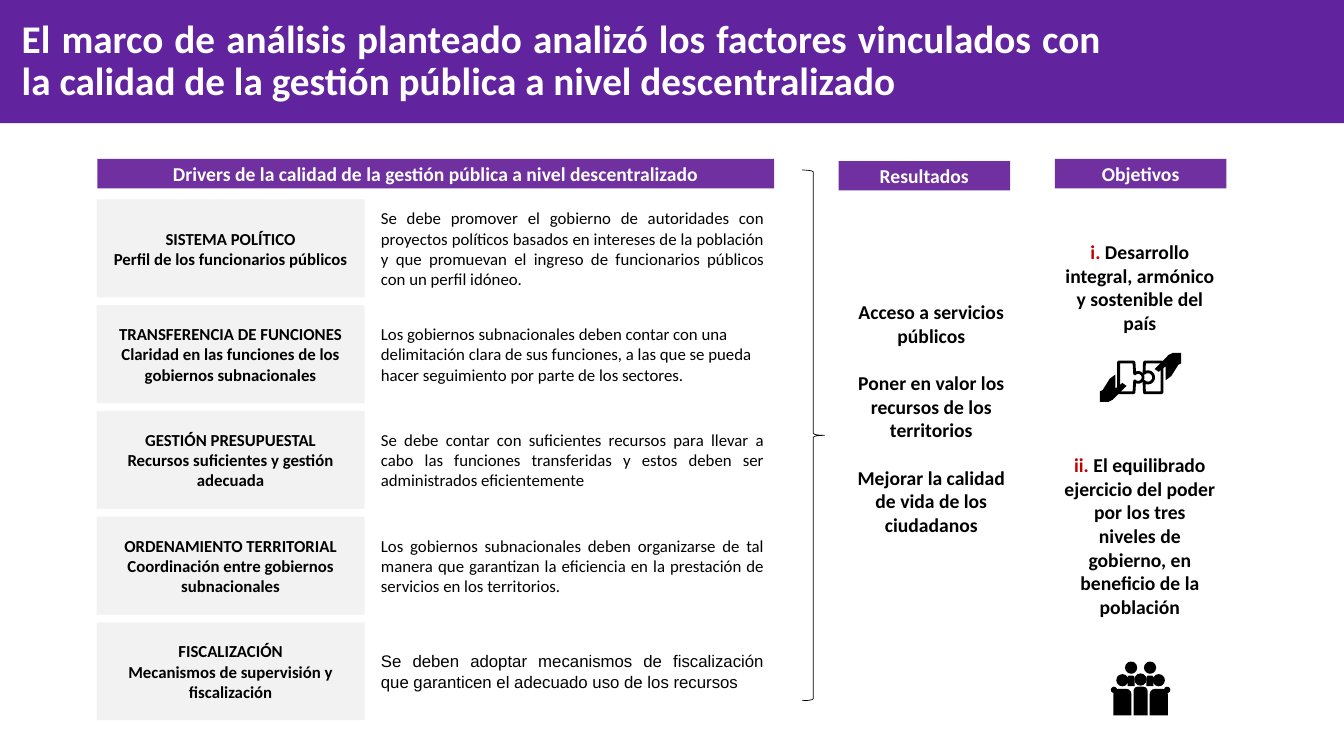
from math import cos, radians, sin

from pptx import Presentation
from pptx.dml.color import RGBColor
from pptx.enum import shapes as sh, text as tx
from pptx.util import Pt

BLACK = RGBColor(0x00, 0x00, 0x00)
WHITE = RGBColor(0xFF, 0xFF, 0xFF)
RED = RGBColor(0xC0, 0x00, 0x00)
GREY = RGBColor(0xF2, 0xF2, 0xF2)
PURPLE = RGBColor(0x70, 0x30, 0xA0)
BAND = RGBColor(0x62, 0x23, 0x9F)
JUSTIFY, CENTER, LEFT = tx.PP_ALIGN.JUSTIFY, tx.PP_ALIGN.CENTER, tx.PP_ALIGN.LEFT
MIDDLE, TOP = tx.MSO_ANCHOR.MIDDLE, tx.MSO_ANCHOR.TOP
RECTANGLE, OVAL = sh.MSO_SHAPE.RECTANGLE, sh.MSO_SHAPE.OVAL
ROUND_TOP = sh.MSO_SHAPE.ROUND_2_SAME_RECTANGLE

prs = Presentation()
prs.slide_width, prs.slide_height = Pt(960), Pt(540)
slide = prs.slides.add_slide(prs.slide_layouts[5])


def add_block(kind, left, top, width, height, fill):
    """Add a plain filled shape, measured in points."""
    block = slide.shapes.add_shape(kind, Pt(left), Pt(top), Pt(width), Pt(height))
    block.shadow.inherit = False
    block.fill.solid()
    block.fill.fore_color.rgb = fill
    block.line.fill.background()
    return block


def write(shape, paragraphs, size, color=BLACK, bold=True, align=CENTER,
          anchor=MIDDLE, gap=0, font="Calibri"):
    """Fill a shape with paragraphs; a pair is a red numeral and its words."""
    frame = shape.text_frame
    frame.word_wrap = True
    frame.auto_size = tx.MSO_AUTO_SIZE.NONE
    frame.vertical_anchor = anchor
    for i, content in enumerate(paragraphs):
        paragraph = frame.add_paragraph() if i else frame.paragraphs[0]
        paragraph.alignment = align
        paragraph.space_before = Pt(gap if i else 0)
        paragraph.font.name, paragraph.font.size = font, Pt(size)
        paragraph.font.bold = bold
        paragraph.font.color.rgb = color
        if isinstance(content, tuple):
            numeral, content = content
            numeral_run = paragraph.add_run()
            numeral_run.text = numeral
            numeral_run.font.color.rgb = RED
        paragraph.add_run().text = content


# Title on its band
band = add_block(RECTANGLE, 0, 0, 960, 88, BAND)
title = slide.shapes.title
band._element.addnext(title._element)
title.left, title.top, title.width, title.height = Pt(15.5), Pt(24.5), Pt(778), Pt(39)
write(title, ["El marco de análisis planteado analizó los factores vinculados con "
              "la calidad de la gestión pública a nivel descentralizado"],
      28, WHITE, align=JUSTIFY)
title.text_frame.margin_left = 0
title.text_frame.paragraphs[0].line_spacing = 0.9

# Column headings
headings = [
    (69.5, 113.5, 483.5, "Drivers de la calidad de la gestión pública a nivel descentralizado"),
    (599, 115, 122.5, "Resultados"),
    (753.5, 113.5, 122.5, "Objetivos"),
]
for left, top, width, words in headings:
    write(add_block(RECTANGLE, left, top, width, 21, PURPLE), [words], 14, WHITE)

# Drivers and their descriptions
drivers = [
    ("SISTEMA POLÍTICO", "Perfil de los funcionarios públicos",
     "Se debe promover el gobierno de autoridades con proyectos políticos basados en "
     "intereses de la población y que promuevan el ingreso de funcionarios públicos "
     "con un perfil idóneo.", JUSTIFY, "Calibri"),
    ("TRANSFERENCIA DE FUNCIONES", "Claridad en las funciones de los gobiernos subnacionales",
     "Los gobiernos subnacionales deben contar con una delimitación clara de sus "
     "funciones, a las que se pueda hacer seguimiento por parte de los sectores.",
     LEFT, "Calibri"),
    ("GESTIÓN PRESUPUESTAL", "Recursos suficientes y gestión adecuada",
     "Se debe contar con suficientes recursos para llevar a cabo las funciones "
     "transferidas y estos deben ser administrados eficientemente", JUSTIFY, "Calibri"),
    ("ORDENAMIENTO TERRITORIAL", "Coordinación entre gobiernos subnacionales",
     "Los gobiernos subnacionales deben organizarse de tal manera que garantizan la "
     "eficiencia en la prestación de servicios en los territorios.", JUSTIFY, "Calibri"),
    ("FISCALIZACIÓN", "Mecanismos de supervisión y fiscalización",
     "Se deben adoptar mecanismos de fiscalización que garanticen el adecuado uso de "
     "los recursos", JUSTIFY, "Arial"),
]
FIRST_ROW, ROW_PITCH, ROW_HEIGHT = 142.5, 75.5, 70
for row, (driver, focus, detail, align, font) in enumerate(drivers):
    top = FIRST_ROW + ROW_PITCH * row
    card = add_block(RECTANGLE, 69, top, 191.5, ROW_HEIGHT, GREY)
    write(card, [driver, focus], 12)
    description = slide.shapes.add_textbox(Pt(265), Pt(top), Pt(288), Pt(ROW_HEIGHT))
    write(description, [detail], 12, bold=False, align=align, font=font)

# Brace from the drivers to the results
brace = slide.shapes.add_shape(sh.MSO_SHAPE.RIGHT_BRACE, Pt(573), Pt(121.5), Pt(16), Pt(379))
brace.shadow.inherit = False
brace.fill.background()
brace.line.color.rgb = BLACK
brace.line.width = Pt(0.5)

# Results and objectives
results = slide.shapes.add_textbox(Pt(604), Pt(211), Pt(122.5), Pt(180))
write(results, ["Acceso a servicios públicos",
                "Poner en valor los recursos de los territorios",
                "Mejorar la calidad de vida de los ciudadanos"], 14, anchor=TOP, gap=17)
objectives = slide.shapes.add_textbox(Pt(753), Pt(168), Pt(122.5), Pt(282))
write(objectives, [
    ("i.", " Desarrollo integral, armónico y sostenible del país"),
    ("ii.", " El equilibrado ejercicio del poder por los tres niveles de gobierno, "
            "en beneficio de la población"),
], 14, anchor=TOP, gap=85)

# Puzzle icon: each piece is a box whose inner edge bulges along an arc
ICON_X, PUZZLE_Y, PIECE_HALF = 814.7, 269.6, 11
pieces = [(799, 810, 813, 3.5), (830, 817.5, 820, 4)]  # outer, inner, arc centre, radius
for outer, inner, arc_x, radius in pieces:
    arc = [(arc_x + radius * cos(radians(angle)), PUZZLE_Y + radius * sin(radians(angle)))
           for angle in range(-135, 136, 15)]
    top, bottom = PUZZLE_Y - PIECE_HALF, PUZZLE_Y + PIECE_HALF
    corners = [(outer, top), (inner, top), *arc, (inner, bottom), (outer, bottom)]
    start, *others = [(Pt(x), Pt(y)) for x, y in corners]
    builder = slide.shapes.build_freeform(*start)
    builder.add_line_segments(others, close=True)
    piece = builder.convert_to_shape()
    piece.shadow.inherit = False
    piece.fill.background()
    piece.line.color.rgb = BLACK
    piece.line.width = Pt(2)

# Hands around the puzzle centre: the right one is the left one turned half round
hand_outline = [(-10, 6), (-13, 4), (-18, 8), (-18, -2), (-22, 1),
                (-27, 9), (-29, 10), (-29, 17.5), (-23, 17.5), (-20, 16)]
for turn in (1, -1):
    start, *others = [(Pt(ICON_X + turn * x), Pt(PUZZLE_Y + turn * y)) for x, y in hand_outline]
    builder = slide.shapes.build_freeform(*start)
    builder.add_line_segments(others, close=True)
    hand = builder.convert_to_shape()
    hand.shadow.inherit = False
    hand.fill.solid()
    hand.fill.fore_color.rgb = BLACK
    hand.line.fill.background()

# People icon: a head over a round-shouldered torso, mirrored about the middle
HEAD, FIST = 8.75, 4.5
people = [  # offsets from the middle, head top, torso top, torso width, torso bottom
    ((-6.75, 6.75), 472.5, 482.5, 5, 490),
    ((0,), 481, 490.5, 10, 511),
    ((-13, 13), 481.5, 492, 13, 511),
]
for offsets, head_top, torso_top, width, bottom in people:
    for offset in offsets:
        middle = ICON_X + offset
        add_block(OVAL, middle - HEAD / 2, head_top, HEAD, HEAD, BLACK)
        torso = add_block(ROUND_TOP, middle - width / 2, torso_top,
                          width, bottom - torso_top, BLACK)
        torso.adjustments[0] = 0.3
for offset in (-19, 19):
    add_block(OVAL, ICON_X + offset - FIST / 2, 490.5, FIST, FIST, BLACK)

prs.save("out.pptx")
